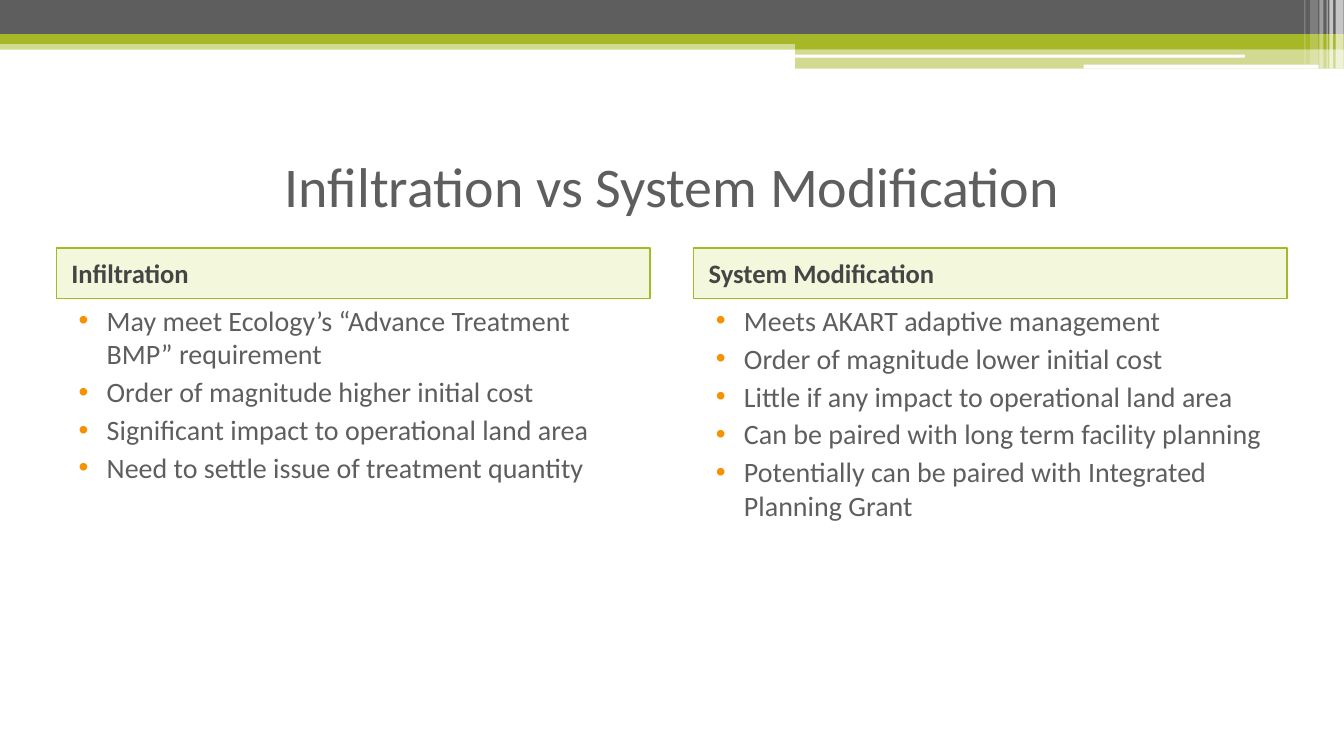
from lxml import etree
from pptx import Presentation
from pptx import util as u
from pptx.dml.color import RGBColor
from pptx.enum import shapes, text
from pptx.oxml.ns import qn

HUES = {"grey": "5E5E5E", "green": "A6B727", "pale": "D3E171",
        "dark": "454545", "orange": "F69200", "white": "FFFFFF"}
RECT = shapes.MSO_SHAPE.RECTANGLE
ROUND = shapes.MSO_SHAPE.ROUNDED_RECTANGLE
MIDDLE = text.MSO_ANCHOR.MIDDLE

# left, top, width, height in cm; colour; opacity in percent
BANDS = [
    (0, 1.02, 33.87, 0.23, "green", 50),
    (0, 0, 33.87, 0.86, "grey", 100),
    (0, 0.86, 33.87, 0.25, "green", 100),
    (20.04, 0.99, 13.83, 0.25, "green", 100),
    (20.04, 1.23, 13.83, 0.5, "green", 50),
]
SLITS = [(20.02, 1.38, 11.35, 0.07), (27.31, 1.63, 5.92, 0.1)]
# left, width, height in cm; opacity in percent
STRIPES = [
    (33.66, 0.2, 1.73, 65), (33.5, 0.1, 1.73, 65), (33.43, 0.03, 1.73, 60),
    (33.25, 0.1, 1.73, 40), (33.02, 0.2, 1.63, 20), (32.87, 0.03, 1.63, 30),
]
COLUMNS = [
    ("Infiltration", [
        "May meet Ecology’s “Advance Treatment BMP” requirement",
        "Order of magnitude higher initial cost",
        "Significant impact to operational land area",
        "Need to settle issue of treatment quantity",
    ]),
    ("System Modification", [
        "Meets AKART adaptive management",
        "Order of magnitude lower initial cost",
        "Little if any impact to operational land area",
        "Can be paired with long term facility planning",
        "Potentially can be paired with Integrated Planning Grant",
    ]),
]
EDGE, WIDTH, STEP = 1.42, 14.96, 16.06


def rgb(name):
    return RGBColor.from_string(HUES[name])


def style(item, **values):
    for name, value in values.items():
        setattr(item, name, value)


def block(slide, box, hue, alpha=100, kind=RECT):
    """Add a filled shape without a line; alpha is its opacity in percent."""
    shape = slide.shapes.add_shape(kind, *map(u.Cm, box))
    shape.shadow.inherit = False
    shape.fill.solid()
    shape.fill.fore_color.rgb = rgb(hue)
    shape.line.fill.background()
    if alpha < 100:
        tint = shape.fill._xPr.find(qn("a:solidFill"))[0]
        etree.SubElement(tint, qn("a:alpha"), val=str(alpha * 1000))
    return shape


def write(para, words, size, hue, align=text.PP_ALIGN.LEFT, bold=False):
    run = para.add_run()
    run.text = words
    para.alignment = align
    style(run.font, name="Calibri", size=u.Pt(size), bold=bold)
    run.font.color.rgb = rgb(hue)


def indent(para, left, first=0):
    props = para._p.get_or_add_pPr()
    props.set("marL", str(u.Cm(left)))
    props.set("indent", str(u.Cm(first)))
    return props


def bullet(para):
    props = indent(para, 1.02, -0.71)
    tint = etree.SubElement(props, qn("a:buClr"))
    etree.SubElement(tint, qn("a:srgbClr"), val=HUES["orange"])
    etree.SubElement(props, qn("a:buFont"), typeface="Arial")
    etree.SubElement(props, qn("a:buChar"), char="•")


def frame(slide, box):
    area = slide.shapes.add_textbox(*map(u.Cm, box)).text_frame
    area.word_wrap = True
    return area


def banner(slide):
    for *box, hue, alpha in BANDS:
        block(slide, box, hue, alpha)
    for box in SLITS:
        block(slide, box, "white", kind=ROUND)
    for left, width, height, alpha in STRIPES:
        block(slide, (left, 0, width, height), "white", alpha)


def title(slide, words):
    area = frame(slide, (EDGE, 3.18, STEP + WIDTH, 2.97))
    area.vertical_anchor = MIDDLE
    write(area.paragraphs[0], words, 40, "grey", text.PP_ALIGN.CENTER)


def header(slide, left, words):
    shape = block(slide, (left, 6.25, WIDTH, 1.27), "pale", 25)
    shape.line.color.rgb = rgb("green")
    shape.line.width = u.Pt(1)
    shape.text_frame.vertical_anchor = MIDDLE
    para = shape.text_frame.paragraphs[0]
    para.space_before = u.Pt(3)
    indent(para, 0.13)
    write(para, words, 19, "dark", bold=True)


def points(slide, left, items):
    area = frame(slide, (left, 7.52, WIDTH, 10.8))
    for i, item in enumerate(items):
        para = area.add_paragraph() if i else area.paragraphs[0]
        para.space_before = u.Pt(3)
        bullet(para)
        write(para, item, 20, "grey")


def main():
    deck = Presentation()
    style(deck, slide_width=u.Cm(33.87), slide_height=u.Cm(19.05))
    slide = deck.slides.add_slide(deck.slide_layouts[6])
    banner(slide)
    title(slide, "Infiltration vs System Modification")
    for i, (name, items) in enumerate(COLUMNS):
        left = EDGE + i * STEP
        header(slide, left, name)
        points(slide, left, items)
    deck.save("out.pptx")


if __name__ == "__main__":
    main()
